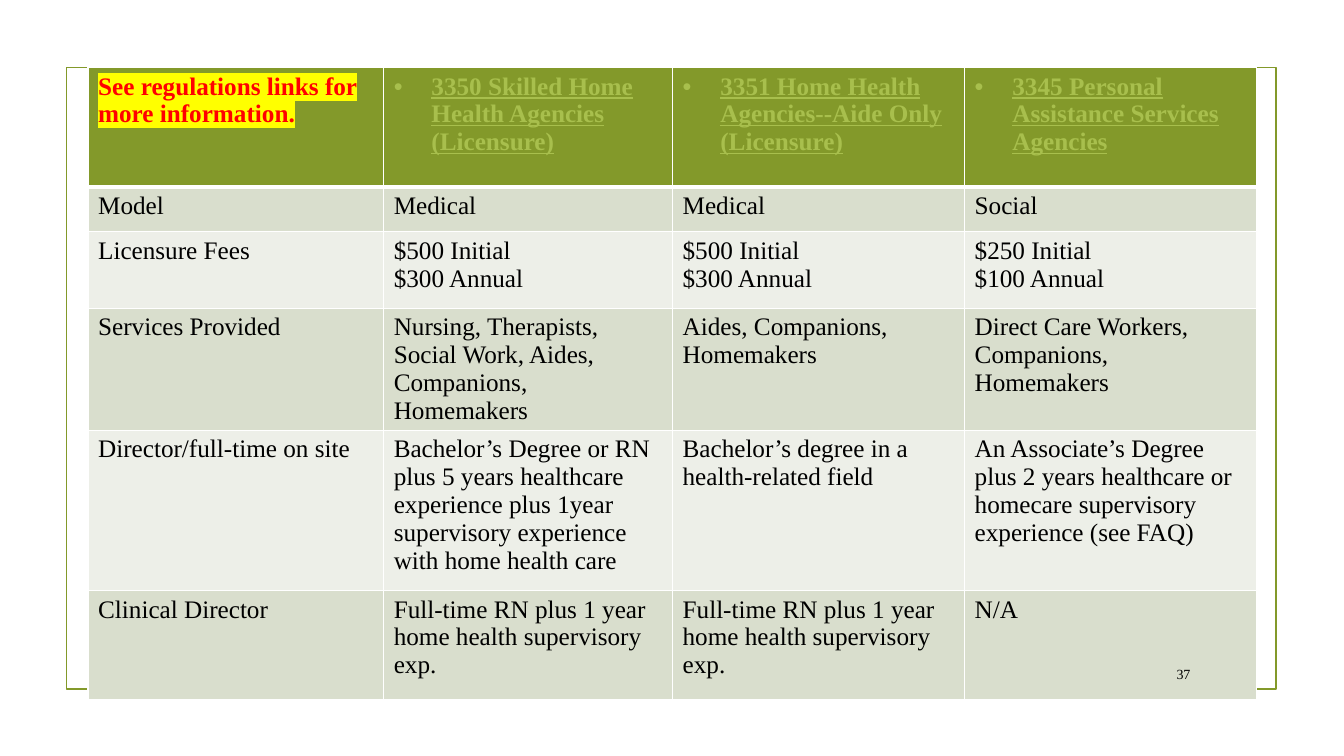
from lxml.etree import SubElement
from pptx import Presentation
from pptx.dml.color import RGBColor
from pptx.enum.shapes import MSO_SHAPE
from pptx.enum.text import MSO_ANCHOR, PP_ALIGN
from pptx.oxml.ns import qn
from pptx.util import Cm, Pt

GREEN, LINK_GREEN = "83992A", "A8BF4D"
BANDS = ("EDEFE8", "D9DECD")
BLACK, WHITE, RED, YELLOW = "000000", "FFFFFF", "FF0000", "FFFF00"

COLUMN_WIDTHS = (7.45, 7.28, 7.36, 7.36)
ROW_HEIGHTS = (3.02, 1.12, 1.93, 3.07, 4.04, 2.74)
AGENCY_ROWS = (
    ("See regulations links for more information.",
     "3350 Skilled Home Health Agencies (Licensure)",
     "3351 Home Health Agencies--Aide Only (Licensure)",
     "3345 Personal Assistance Services Agencies"),
    ("Model", "Medical", "Medical", "Social"),
    ("Licensure Fees", "$500 Initial\n$300 Annual",
     "$500 Initial\n$300 Annual", "$250 Initial\n$100 Annual"),
    ("Services Provided",
     "Nursing, Therapists, Social Work, Aides, Companions, Homemakers",
     "Aides, Companions, Homemakers",
     "Direct Care Workers, Companions, Homemakers"),
    ("Director/full-time on site",
     "Bachelor’s Degree or RN plus 5 years healthcare experience plus 1year "
     "supervisory experience with home health care",
     "Bachelor’s degree in a health-related field",
     "An Associate’s Degree plus 2 years healthcare or homecare supervisory "
     "experience (see FAQ)"),
    ("Clinical Director",
     "Full-time RN plus 1 year home health supervisory exp.",
     "Full-time RN plus 1 year home health supervisory exp.",
     "N/A"),
)


def color(hex_value):
    return RGBColor.from_string(hex_value)


def add_color_element(parent, tag, hex_value):
    """Append a DrawingML element that wraps one RGB colour."""
    element = SubElement(parent, qn(tag))
    SubElement(element, qn("a:srgbClr"), val=hex_value)


class SlideBuilder:
    def __init__(self, slide, font_name="Times New Roman"):
        self.slide = slide
        self.font_name = font_name

    def style(self, paragraph, size, hex_value, bold=False, underline=False):
        font = paragraph.font
        font.name, font.size = self.font_name, Pt(size)
        font.bold, font.underline = bold, underline
        font.color.rgb = color(hex_value)

    def frame(self, left, top, width, height):
        shape = self.slide.shapes.add_shape(
            MSO_SHAPE.RECTANGLE, Cm(left), Cm(top), Cm(width), Cm(height))
        shape.shadow.inherit = False
        shape.fill.background()
        shape.line.color.rgb = color(GREEN)
        shape.line.width = Pt(1.25)

    def table(self, left, top, rows, column_widths, row_heights):
        table = self.slide.shapes.add_table(
            len(rows), len(column_widths), Cm(left), Cm(top),
            Cm(sum(column_widths)), Cm(sum(row_heights))).table
        table.first_row = table.horz_banding = False
        for column, width in zip(table.columns, column_widths):
            column.width = Cm(width)
        for row_index, (row, texts) in enumerate(zip(table.rows, rows)):
            row.height = Cm(row_heights[row_index])
            for column_index, text in enumerate(texts):
                self.cell(row.cells[column_index], text, row_index, column_index)

    def cell(self, cell, text, row_index, column_index):
        self.borders(cell, top=3 if row_index == 1 else 1,
                     bottom=3 if row_index == 0 else 1)
        cell.fill.solid()
        cell.fill.fore_color.rgb = color(BANDS[row_index % 2] if row_index else GREEN)
        cell.text = text
        for paragraph in cell.text_frame.paragraphs:
            if row_index:
                self.style(paragraph, 18, BLACK)
            elif column_index:
                self.bullet(paragraph, LINK_GREEN)
                self.style(paragraph, 18, LINK_GREEN, bold=True, underline=True)
            else:
                self.style(paragraph, 18, RED, bold=True)
                run_properties = paragraph.runs[0].font._element
                add_color_element(run_properties, "a:highlight", YELLOW)

    def borders(self, cell, top, bottom):
        properties = cell._tc.get_or_add_tcPr()
        for side, width in (("L", 1), ("R", 1), ("T", top), ("B", bottom)):
            line = SubElement(properties, qn(f"a:ln{side}"), w=str(Pt(width)))
            add_color_element(line, "a:solidFill", WHITE)

    def bullet(self, paragraph, hex_value):
        properties = paragraph._p.get_or_add_pPr()
        indent = Cm(0.95)
        properties.set("marL", str(indent))
        properties.set("indent", str(-indent))
        add_color_element(properties, "a:buClr", hex_value)
        SubElement(properties, qn("a:buFont"), typeface="Arial")
        SubElement(properties, qn("a:buChar"), char="•")
        tabs = SubElement(properties, qn("a:tabLst"))
        SubElement(tabs, qn("a:tab"), pos=str(Cm(1.27)), algn="l")

    def page_number(self, text, left, top, width, height):
        text_frame = self.slide.shapes.add_textbox(
            Cm(left), Cm(top), Cm(width), Cm(height)).text_frame
        text_frame.word_wrap = True
        text_frame.vertical_anchor = MSO_ANCHOR.MIDDLE
        text_frame.text = text
        paragraph = text_frame.paragraphs[0]
        paragraph.alignment = PP_ALIGN.RIGHT
        self.style(paragraph, 10, BLACK)


def main():
    presentation = Presentation()
    presentation.slide_width, presentation.slide_height = Cm(33.87), Cm(19.05)
    builder = SlideBuilder(presentation.slides.add_slide(presentation.slide_layouts[6]))
    builder.frame(1.68, 1.7, 30.48, 15.67)
    builder.table(2.22, 1.7, AGENCY_ROWS, COLUMN_WIDTHS, ROW_HEIGHTS)
    builder.page_number("37", 28.75, 16.59, 1.5, 0.79)
    presentation.save("out.pptx")


if __name__ == "__main__":
    main()
